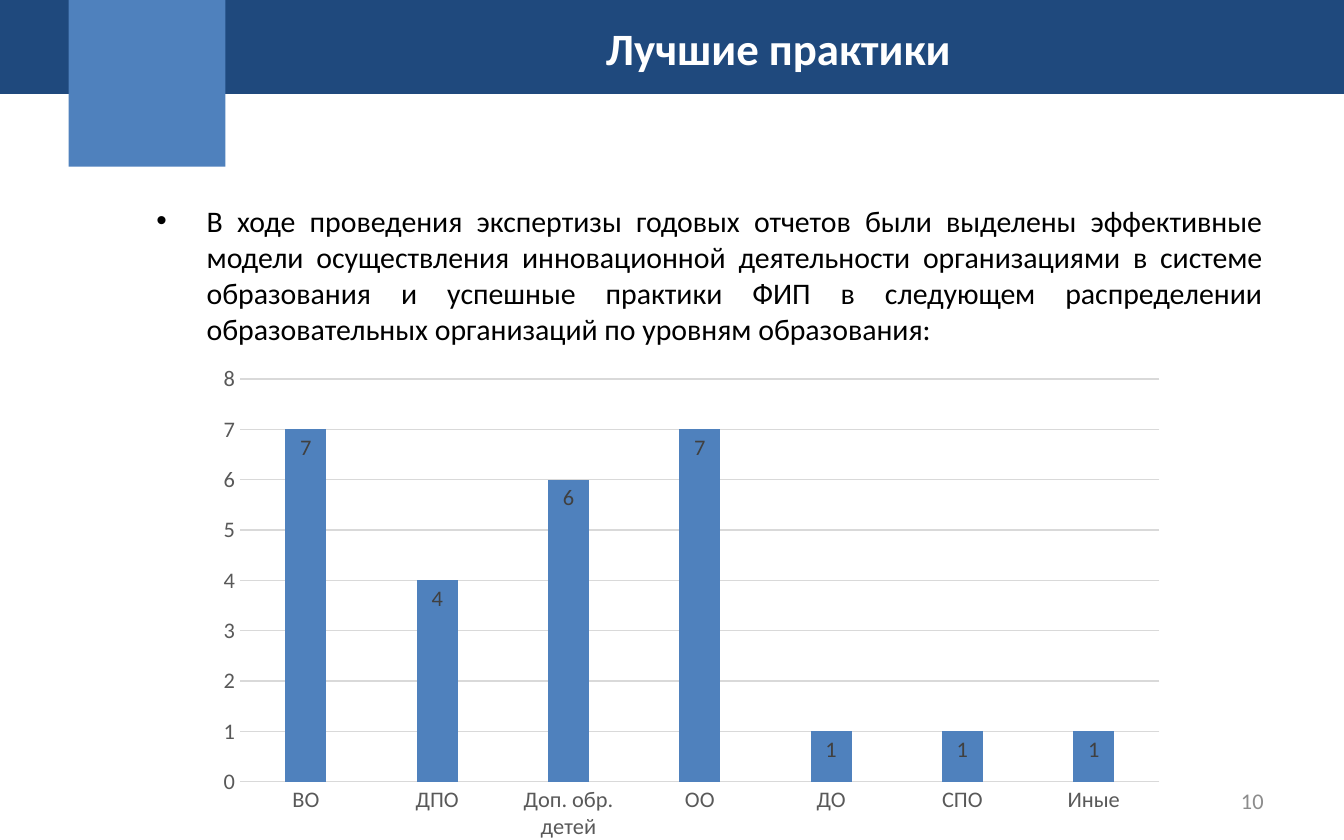
from lxml import etree
from pptx import Presentation
from pptx.chart.data import CategoryChartData
from pptx.dml.color import RGBColor
from pptx.enum.chart import XL_CHART_TYPE, XL_LABEL_POSITION, XL_TICK_MARK
from pptx.enum.shapes import MSO_SHAPE
from pptx.enum.text import MSO_ANCHOR, MSO_AUTO_SIZE, PP_ALIGN
from pptx.oxml import parse_xml
from pptx.oxml.ns import nsdecls, qn
from pptx.util import Emu, Pt

PX = 9525  # EMU in one px, 96 px to the inch
FONT = "Calibri"
NAVY = RGBColor(0x1F, 0x49, 0x7D)
BLUE = RGBColor(0x4F, 0x81, 0xBD)
WHITE = RGBColor(0xFF, 0xFF, 0xFF)
BLACK = RGBColor(0x00, 0x00, 0x00)
LIGHT_GRAY = RGBColor(0xD9, 0xD9, 0xD9)
PAGE_GRAY = RGBColor(0x8C, 0x8C, 0x8C)
AXIS_GRAY = RGBColor(0x59, 0x59, 0x59)
LABEL_GRAY = RGBColor(0x40, 0x40, 0x40)

TITLE = "Лучшие практики"
INTRO = (
    "В ходе проведения экспертизы годовых отчетов были выделены эффективные "
    "модели осуществления инновационной деятельности организациями в системе "
    "образования и успешные практики ФИП в следующем распределении "
    "образовательных организаций по уровням образования:"
)
PRACTICES = {
    "ВО": 7,
    "ДПО": 4,
    "Доп. обр. детей": 6,
    "ОО": 7,
    "ДО": 1,
    "СПО": 1,
    "Иные": 1,
}
PLOT_AREA = {"x": 0.045, "y": 0.049, "w": 0.934, "h": 0.836}


def to_emu(*lengths):
    return [Emu(length * PX) for length in lengths]


def place(shape, box):
    shape.left, shape.top, shape.width, shape.height = to_emu(*box)


def style_font(font, size, color, bold=False):
    font.name = FONT
    font.size = Pt(size)
    font.bold = bold
    font.color.rgb = color


def add_block(slide, box, color, layer):
    """Add a plain rectangle behind the placeholders, at the given layer."""
    block = slide.shapes.add_shape(MSO_SHAPE.RECTANGLE, *to_emu(*box))
    block.shadow.inherit = False
    block.fill.solid()
    block.fill.fore_color.rgb = color
    block.line.fill.background()
    slide.shapes._spTree.insert(2 + layer, block._element)


def add_header(slide, box):
    left, top, width, height = box
    add_block(slide, box, NAVY, 0)
    add_block(slide, (left + 49, top, 112, 119), BLUE, 1)

    title = slide.shapes.title
    place(title, (left + 125, top + 10, 862, 48))
    frame = title.text_frame
    frame.text = TITLE
    frame.auto_size = MSO_AUTO_SIZE.NONE
    frame.vertical_anchor = MSO_ANCHOR.MIDDLE
    paragraph = frame.paragraphs[0]
    paragraph.alignment = PP_ALIGN.CENTER
    style_font(paragraph.runs[0].font, 24, WHITE, bold=True)


def fill_intro(slide, box):
    body = slide.placeholders[1]
    place(body, box)
    frame = body.text_frame
    frame.text = INTRO
    frame.auto_size = MSO_AUTO_SIZE.NONE
    paragraph = frame.paragraphs[0]
    paragraph.alignment = PP_ALIGN.JUSTIFY
    paragraph.space_before = Pt(0)
    style_font(paragraph.runs[0].font, 16, BLACK)


def set_plot_area(chart):
    """Fix the inner plot area as fractions of the chart."""
    plot_area = chart._chartSpace.chart.plotArea
    for old_layout in plot_area.findall(qn("c:layout")):
        plot_area.remove(old_layout)
    layout = parse_xml(f"<c:layout {nsdecls('c')}><c:manualLayout/></c:layout>")
    settings = {"layoutTarget": "inner", "xMode": "edge", "yMode": "edge", **PLOT_AREA}
    for name, value in settings.items():
        etree.SubElement(layout[0], qn(f"c:{name}")).set("val", str(value))
    plot_area.insert(0, layout)


def style_axes(chart):
    for axis in (chart.category_axis, chart.value_axis):
        axis.major_tick_mark = axis.minor_tick_mark = XL_TICK_MARK.NONE
        style_font(axis.tick_labels.font, 12, AXIS_GRAY)
    value_axis = chart.value_axis
    value_axis.minimum_scale, value_axis.maximum_scale = 0, 8
    value_axis.major_unit = 1
    value_axis.format.line.fill.background()
    value_axis.has_major_gridlines = True
    for line in (chart.category_axis.format.line, value_axis.major_gridlines.format.line):
        line.color.rgb = LIGHT_GRAY
        line.width = Pt(0.75)


def add_practices_chart(slide, box):
    data = CategoryChartData()
    data.categories = list(PRACTICES)
    data.add_series("Series 1", list(PRACTICES.values()))
    chart = slide.shapes.add_chart(
        XL_CHART_TYPE.COLUMN_CLUSTERED, *to_emu(*box), data
    ).chart
    chart.has_legend = False
    chart.has_title = False
    style_font(chart.font, 10, BLACK)
    set_plot_area(chart)
    style_axes(chart)

    plot = chart.plots[0]
    plot.vary_by_categories = False
    plot.gap_width = 219
    plot.overlap = -27
    fill = plot.series[0].format.fill
    fill.solid()
    fill.fore_color.rgb = BLUE
    labels = plot.series[0].data_labels
    labels.show_value = True
    labels.position = XL_LABEL_POSITION.INSIDE_END
    style_font(labels.font, 12, LABEL_GRAY)


def add_page_number(slide, box):
    frame = slide.shapes.add_textbox(*to_emu(*box)).text_frame
    frame.word_wrap = True
    frame.vertical_anchor = MSO_ANCHOR.MIDDLE
    paragraph = frame.paragraphs[0]
    paragraph.text = "10"
    paragraph.alignment = PP_ALIGN.RIGHT
    style_font(paragraph.runs[0].font, 12, PAGE_GRAY)


def main():
    presentation = Presentation()
    presentation.slide_width, presentation.slide_height = to_emu(960, 600)
    slide = presentation.slides.add_slide(presentation.slide_layouts[1])
    add_header(slide, (0, 0, 960, 67))
    fill_intro(slide, (102, 140, 810, 130))
    add_page_number(slide, (688, 556, 224, 32))
    add_practices_chart(slide, (140, 254, 703, 346))
    presentation.save("out.pptx")


if __name__ == "__main__":
    main()
